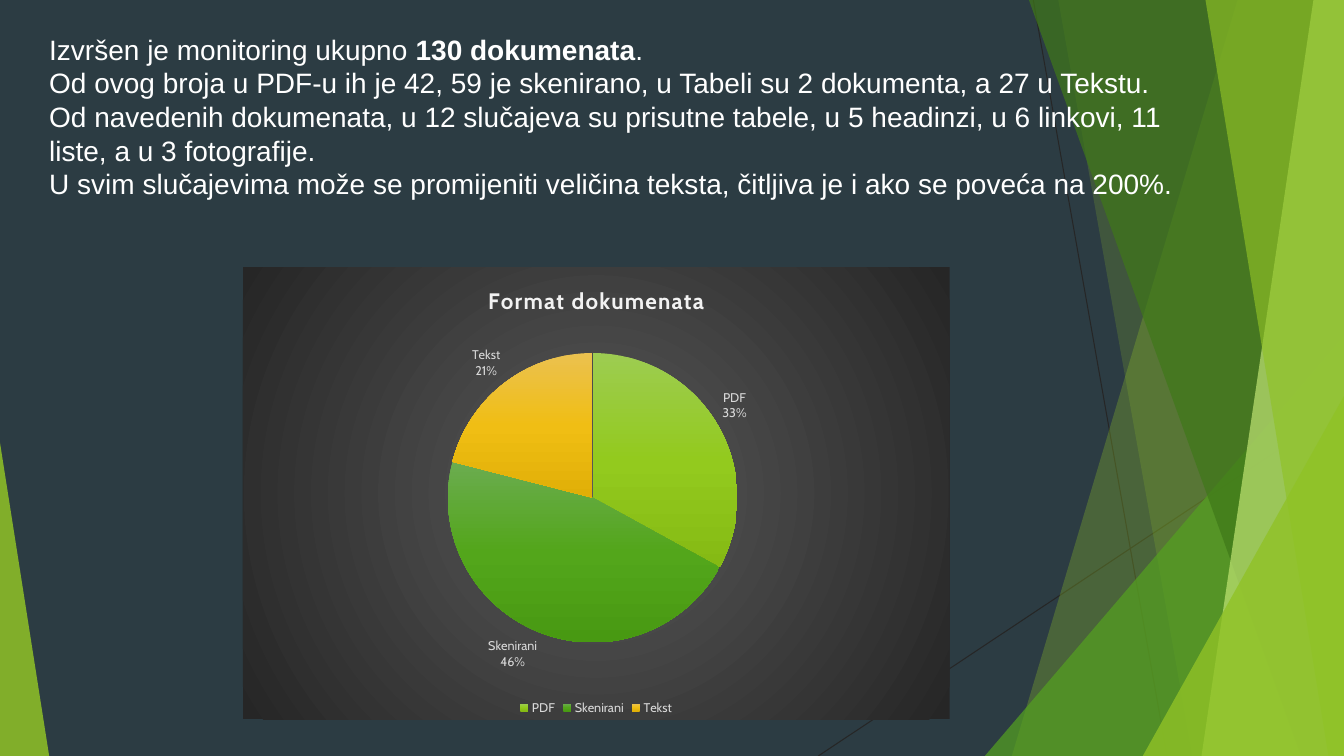
from dataclasses import dataclass

from lxml import etree
from pptx import Presentation
from pptx import util as u
from pptx.chart import data
from pptx.dml import color as c
from pptx.enum import chart as ch, shapes
from pptx.oxml import ns


@dataclass(frozen=True)
class Theme:
    background: str = "2C3C43"
    line: str = "262626"
    lime: str = "90C226"
    green: str = "54A021"
    forest: str = "3F7819"
    pale: str = "C0E474"
    text: str = "FFFFFF"
    title: str = "F2F2F2"
    label: str = "D9D9D9"
    body_font: str = "Arial"
    chart_font: str = "Cabin"
    body_size: int = 20
    title_size: int = 16
    chart_size: int = 10
    label_size: int = 9
    chart_stops: tuple = ((0, "595959"), (100, "262626"))
    slice_stops: tuple = (
        ((0, "9DCC51"), (50, "93CA1E"), (100, "85BA14")),
        ((0, "6BAC4F"), (50, "53A61B"), (100, "489912")),
        ((0, "EBC14F"), (50, "F0BE14"), (100, "E0AF07")),
    )


THEME = Theme()
WIDTH, HEIGHT = 33.87, 19.05
BODY = (
    (("Izvršen je monitoring ukupno ", False), ("130 dokumenata", True), (".", False)),
    (("Od ovog broja u PDF-u ih je 42, 59 je skenirano, u Tabeli su 2 dokumenta, a 27 u Tekstu.", False),),
    (("Od navedenih dokumenata, u 12 slučajeva su prisutne tabele, u 5 headinzi, "
      "u 6 linkovi, 11 liste, a u 3 fotografije.", False),),
    (("U svim slučajevima može se promijeniti veličina teksta, čitljiva je i ako se poveća na 200%.", False),),
)
FORMATS = (("PDF", 33), ("Skenirani", 46), ("Tekst", 21))


def style_font(font, size, color, name, bold=False):
    font.size = u.Pt(size)
    font.name = name
    font.bold = bold
    font.color.rgb = c.RGBColor.from_string(color)


def add_span(para, content, spacing=None, **style):
    span = para.add_run()
    span.text = content
    style_font(span.font, **style)
    if spacing:
        span.font._element.set("spc", str(spacing))


def fill_glass(shape, color, opacity):
    shape.shadow.inherit = False
    shape.line.fill.background()
    shape.fill.solid()
    shape.fill.fore_color.rgb = c.RGBColor.from_string(color)
    tint = shape.element.spPr.find(ns.qn("a:solidFill"))[0]
    etree.SubElement(tint, ns.qn("a:alpha"), val=str(opacity * 1000))


def add_ray(page, start, end):
    ends = [u.Cm(value) for value in (*start, *end)]
    ray = page.shapes.add_connector(shapes.MSO_CONNECTOR.STRAIGHT, *ends)
    ray.line.width = u.Pt(0.75)
    ray.line.color.rgb = c.RGBColor.from_string(THEME.line)
    etree.SubElement(ray.element.spPr, ns.qn("a:effectLst"))


def add_shard(page, top_x, bottom_x, color, opacity):
    corners = ((WIDTH, 0), (WIDTH, HEIGHT), (bottom_x, HEIGHT))
    outline = page.shapes.build_freeform(u.Cm(top_x), 0, scale=1.0)
    outline.add_line_segments([(u.Cm(x), u.Cm(y)) for x, y in corners], close=True)
    fill_glass(outline.convert_to_shape(), color, opacity)


def add_triangle(page, left, top, width, apex, color, opacity):
    triangle = page.shapes.add_shape(
        shapes.MSO_SHAPE.ISOSCELES_TRIANGLE,
        u.Cm(left), u.Cm(top), u.Cm(width), u.Cm(HEIGHT - top))
    triangle.adjustments[0] = apex
    fill_glass(triangle, color, opacity)


def add_decoration(page):
    add_ray(page, (26.04, 0), (29.41, HEIGHT))
    add_ray(page, (WIDTH, 10.24), (20.62, HEIGHT))
    add_shard(page, 31.19, 25.5, THEME.lime, 30)
    add_shard(page, 26.67, 30.05, THEME.lime, 20)
    add_triangle(page, 24.82, 8.46, 9.05, 1, THEME.green, 72)
    add_shard(page, 25.93, 32.79, THEME.forest, 70)
    add_shard(page, 33.1, 30.28, THEME.pale, 70)
    add_shard(page, 30.38, 33.48, THEME.lime, 65)
    add_triangle(page, 28.8, 9.98, 5.07, 1, THEME.lime, 80)
    add_triangle(page, 0, 11.15, 1.24, 0, THEME.lime, 85)


def add_body(page):
    box = page.shapes.add_textbox(u.Cm(0.99), u.Cm(0.69), u.Cm(30.07), u.Cm(6.93))
    frame = box.text_frame
    frame.word_wrap = True
    for index, spans in enumerate(BODY):
        para = frame.add_paragraph() if index else frame.paragraphs[0]
        for content, bold in spans:
            add_span(para, content, size=THEME.body_size, color=THEME.text,
                     name=THEME.body_font, bold=bold)


def make_gradient(stops, radial=False):
    gradient = etree.Element(ns.qn("a:gradFill"), rotWithShape="1")
    stop_list = etree.SubElement(gradient, ns.qn("a:gsLst"))
    for position, color in stops:
        stop = etree.SubElement(stop_list, ns.qn("a:gs"), pos=str(position * 1000))
        etree.SubElement(stop, ns.qn("a:srgbClr"), val=color)
    if radial:
        shade = etree.SubElement(gradient, ns.qn("a:path"), path="circle")
        etree.SubElement(shade, ns.qn("a:fillToRect"),
                         {side: "50000" for side in "ltrb"})
    else:
        etree.SubElement(gradient, ns.qn("a:lin"), ang="5400000", scaled="0")
    return gradient


def fill_chart_area(chart):
    area = etree.Element(ns.qn("c:spPr"))
    area.append(make_gradient(THEME.chart_stops, radial=True))
    outline = etree.SubElement(area, ns.qn("a:ln"))
    etree.SubElement(outline, ns.qn("a:noFill"))
    chart.element.find(ns.qn("c:txPr")).addprevious(area)


def fill_slices(chart):
    points = chart.plots[0].series[0].points
    for index in range(len(FORMATS)):
        points[index].format.fill.solid()
        points[index].format.line.fill.background()
    for point, stops in zip(chart.element.iter(ns.qn("c:dPt")), THEME.slice_stops):
        area = point.find(ns.qn("c:spPr"))
        area.replace(area.find(ns.qn("a:solidFill")), make_gradient(stops))


def place_plot(chart, **place):
    plot_area = chart.element.find(".//" + ns.qn("c:plotArea"))
    layout = plot_area.find(ns.qn("c:layout"))
    if layout is None:
        layout = etree.Element(ns.qn("c:layout"))
        plot_area.insert(0, layout)
    manual = etree.SubElement(layout, ns.qn("c:manualLayout"))
    settings = {"layoutTarget": "inner", "xMode": "edge", "yMode": "edge", **place}
    for tag, value in settings.items():
        etree.SubElement(manual, ns.qn("c:" + tag), val=str(value))


def add_pie(page):
    title = "Format dokumenata"
    table = data.CategoryChartData()
    table.categories = [name for name, share in FORMATS]
    table.add_series(title, [share for name, share in FORMATS])
    chart = page.shapes.add_chart(
        ch.XL_CHART_TYPE.PIE, u.Cm(6.12), u.Cm(6.73), u.Cm(17.81), u.Cm(11.4), table).chart
    style_font(chart.font, THEME.chart_size, THEME.text, THEME.chart_font)
    chart.has_title = True
    chart.chart_title.include_in_layout = False
    add_span(chart.chart_title.text_frame.paragraphs[0], title, spacing=100,
             size=THEME.title_size, color=THEME.title, name=THEME.chart_font, bold=True)
    chart.has_legend = True
    chart.legend.position = ch.XL_LEGEND_POSITION.BOTTOM
    chart.legend.include_in_layout = False
    plot = chart.plots[0]
    plot.vary_by_categories = True
    plot.has_data_labels = True
    labels = plot.data_labels
    labels.show_percentage = True
    labels.show_category_name = True
    labels.show_value = False
    labels.position = ch.XL_LABEL_POSITION.OUTSIDE_END
    for part in (chart.legend, labels):
        style_font(part.font, THEME.label_size, THEME.label, THEME.chart_font)
    fill_chart_area(chart)
    fill_slices(chart)
    place_plot(chart, x=0.29, y=0.19, w=0.41, h=0.64)


def main():
    deck = Presentation()
    deck.slide_width, deck.slide_height = u.Cm(WIDTH), u.Cm(HEIGHT)
    page = deck.slides.add_slide(deck.slide_layouts[6])
    page.background.fill.solid()
    page.background.fill.fore_color.rgb = c.RGBColor.from_string(THEME.background)
    add_decoration(page)
    add_body(page)
    add_pie(page)
    deck.save("out.pptx")


if __name__ == "__main__":
    main()
